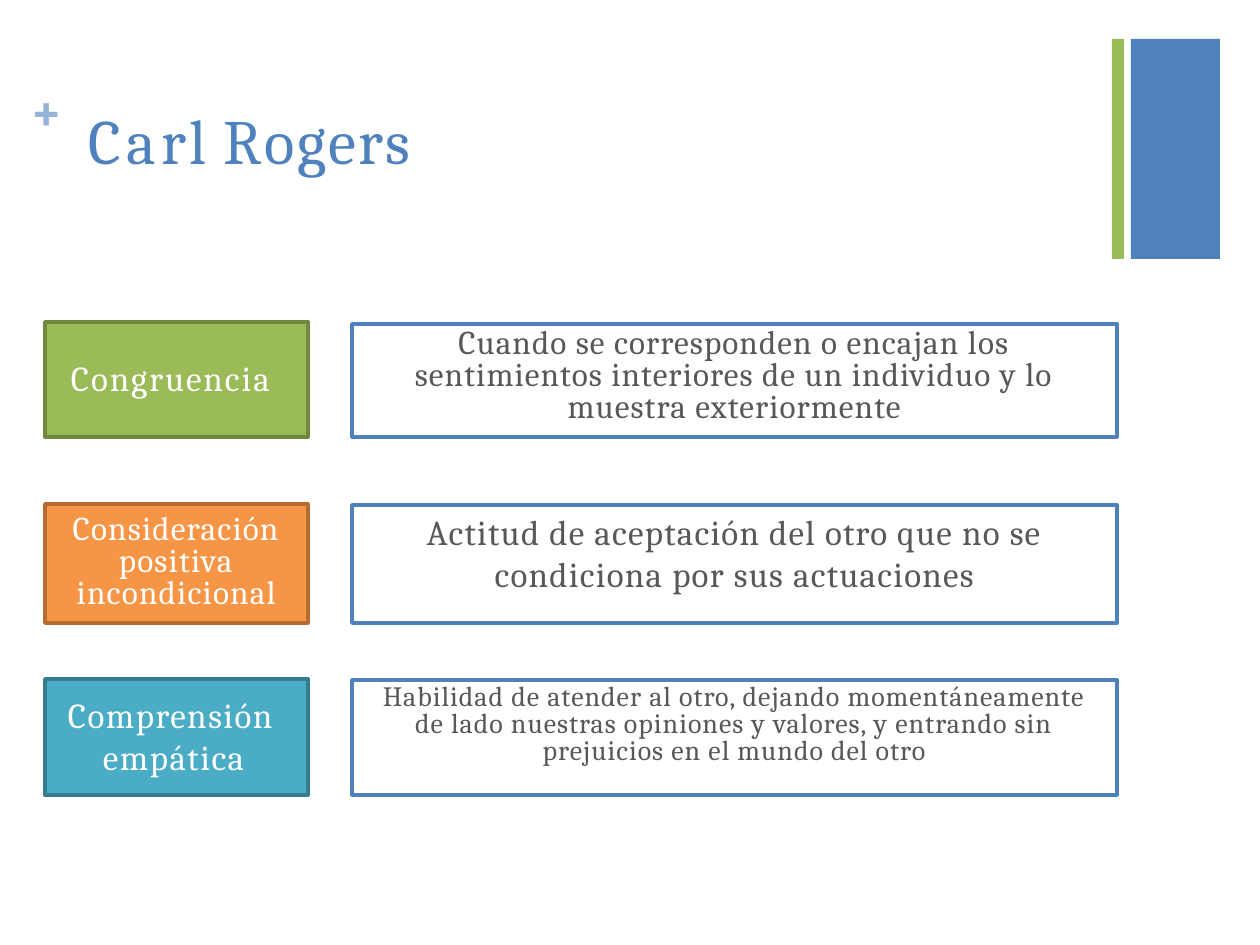
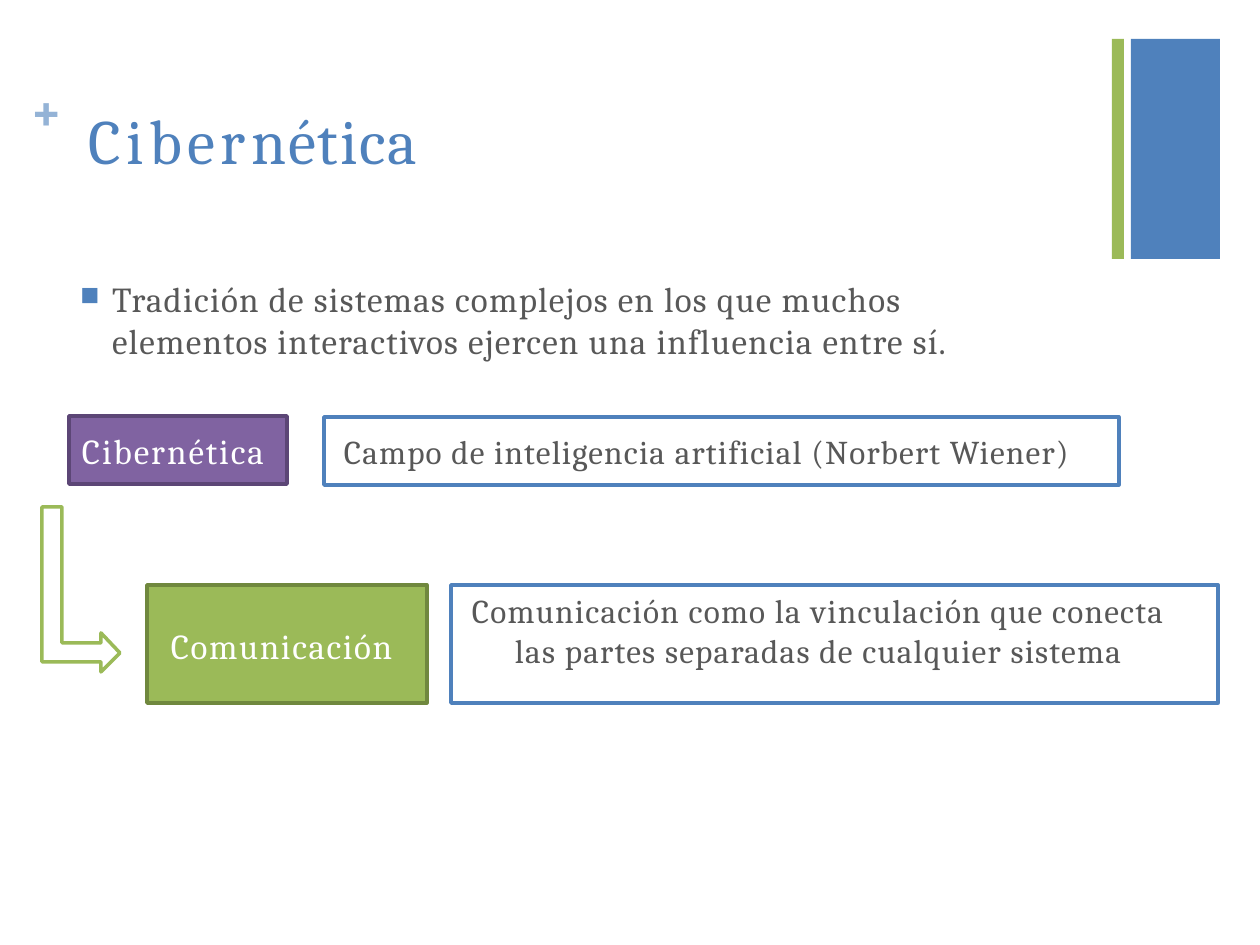
from dataclasses import dataclass
from typing import Optional

from lxml.etree import SubElement
from pptx import Presentation
from pptx.dml.color import RGBColor
from pptx.enum.shapes import MSO_SHAPE
from pptx.enum.text import MSO_ANCHOR, PP_ALIGN
from pptx.oxml.ns import qn
from pptx.shapes.base import BaseShape
from pptx.slide import Slide
from pptx.text.text import TextFrame
from pptx.util import Emu, Pt

PIXEL = 914400 / 126
FONT = "Cambria"
COLORS = {
    "blue": "4F81BC",
    "light_blue": "94B3D6",
    "green": "9BBA58",
    "dark_green": "70883E",
    "orange": "F79546",
    "dark_orange": "B66C30",
    "teal": "4AACC5",
    "dark_teal": "357C91",
    "purple": "8063A1",
    "dark_purple": "5C4676",
    "text": "585858",
    "white": "FFFFFF",
}


@dataclass(frozen=True)
class Area:
    left: int
    top: int
    width: int
    height: int

    def emu(self) -> tuple[Emu, ...]:
        return tuple(px(n) for n in (self.left, self.top, self.width, self.height))


@dataclass(frozen=True)
class Span:
    """A stretch of text with its letter spacing in points."""

    text: str
    spacing: float
    size: float = 20
    color: str = "text"
    bold: bool = False
    raised: int = 0


@dataclass(frozen=True)
class Layout:
    """Insets and indents in pixels, and how lines are set."""

    top: int = 0
    left: int = 0
    right: int = 0
    indent: int = 0
    hanging: int = 0
    centered: bool = False
    line_spacing: Optional[float] = None
    bullet: Optional[str] = None


@dataclass(frozen=True)
class Box:
    area: Area
    span: Span
    layout: Layout
    line: str = "blue"
    fill: Optional[str] = None


def px(length: float) -> Emu:
    return Emu(round(length * PIXEL))


def rgb(name: str) -> RGBColor:
    return RGBColor.from_string(COLORS[name])


def write(frame: TextFrame, *spans: Span, layout: Layout = Layout()) -> None:
    frame.word_wrap = True
    frame.vertical_anchor = MSO_ANCHOR.TOP
    frame.margin_left, frame.margin_right = px(layout.left), px(layout.right)
    frame.margin_top, frame.margin_bottom = px(layout.top), 0
    paragraph = frame.paragraphs[0]
    paragraph.alignment = PP_ALIGN.CENTER if layout.centered else PP_ALIGN.LEFT
    if layout.line_spacing:
        paragraph.line_spacing = layout.line_spacing
    properties = paragraph._p.get_or_add_pPr()
    properties.set("marL", str(px(layout.indent)))
    properties.set("indent", str(-px(layout.hanging)))
    if layout.bullet:
        color = SubElement(properties, qn("a:buClr"))
        SubElement(color, qn("a:srgbClr"), val=COLORS["blue"])
        SubElement(properties, qn("a:buSzPct"), val="75000")
        SubElement(properties, qn("a:buChar"), char=layout.bullet)
    for span in spans:
        run = paragraph.add_run()
        run.text = span.text
        run.font.name = FONT
        run.font.size = Pt(span.size)
        run.font.bold = span.bold
        run.font.color.rgb = rgb(span.color)
        run_properties = run._r.get_or_add_rPr()
        run_properties.set("spc", str(round(span.spacing * 100)))
        if span.raised:
            run_properties.set("baseline", str(span.raised * 1000))


def paint(shape: BaseShape, fill: Optional[str] = None, line: Optional[str] = None) -> None:
    shape.shadow.inherit = False
    if fill:
        shape.fill.solid()
        shape.fill.fore_color.rgb = rgb(fill)
    else:
        shape.fill.background()
    if line:
        shape.line.color.rgb = rgb(line)
        shape.line.width = Pt(2)
    else:
        shape.line.fill.background()


def add_rectangle(slide: Slide, area: Area, fill: Optional[str] = None,
                  line: Optional[str] = None) -> BaseShape:
    shape = slide.shapes.add_shape(MSO_SHAPE.RECTANGLE, *area.emu())
    paint(shape, fill, line)
    return shape


def add_text(slide: Slide, area: Area, *spans: Span, layout: Layout) -> None:
    write(slide.shapes.add_textbox(*area.emu()).text_frame, *spans, layout=layout)


def add_box(slide: Slide, box: Box) -> None:
    shape = add_rectangle(slide, box.area, box.fill, box.line)
    write(shape.text_frame, box.span, layout=box.layout)


def add_bent_arrow(slide: Slide) -> None:
    start, *corners = [(62, 507), (62, 643), (101, 643), (101, 633), (120, 653),
                       (101, 672), (101, 662), (42, 662), (42, 507)]
    builder = slide.shapes.build_freeform(*start, scale=PIXEL)
    builder.add_line_segments(corners, close=True)
    paint(builder.convert_to_shape(), line="green")


def add_titled_slide(presentation, title: list[tuple[str, float]]) -> Slide:
    """Add a blank slide with the corner bands and a title of (text, spacing) pieces."""
    slide = presentation.slides.add_slide(presentation.slide_layouts[6])
    add_rectangle(slide, Area(1131, 39, 89, 220), fill="blue")
    add_rectangle(slide, Area(1112, 39, 12, 220), fill="green")
    plus = Span("+ ", 4, size=54, color="light_blue", bold=True, raised=36)
    pieces = [Span(text, spacing, size=36, color="blue") for text, spacing in title]
    add_text(slide, Area(25, 69, 800, 79), plus, *pieces, layout=Layout(top=1, left=5))
    return slide


def label(area: Area, text: str, color: str, layout: Layout,
          spacing: float = 1.1, size: float = 20) -> Box:
    return Box(area, Span(text, spacing, size, "white"), layout, f"dark_{color}", color)


ROGERS_BOXES = [
    label(Area(45, 322, 263, 115), "Congruencia", "green", Layout(top=35, left=26)),
    Box(Area(352, 324, 765, 113),
        Span("Cuando se corresponden o encajan los sentimientos interiores de un "
             "individuo y lo muestra exteriormente", 0.65, size=19),
        Layout(top=5, left=52, right=52, centered=True, line_spacing=0.8)),
    label(Area(45, 504, 263, 119), "Consideración positiva incondicional", "orange",
          Layout(top=11, left=20, right=20, centered=True, line_spacing=0.8),
          spacing=0.7, size=19),
    Box(Area(352, 505, 765, 118),
        Span("Actitud de aceptación del otro que no se condiciona por sus actuaciones", 0.7),
        Layout(top=5, centered=True)),
    label(Area(45, 679, 263, 116), "Comprensión empática", "teal",
          Layout(top=15, indent=58, hanging=35), spacing=0.85),
    Box(Area(352, 680, 765, 115),
        Span("Habilidad de atender al otro, dejando momentáneamente de lado nuestras "
             "opiniones y valores, y entrando sin prejuicios en el mundo del otro",
             0.6, size=16),
        Layout(top=5, left=25, right=25, centered=True, line_spacing=0.8)),
]

CYBERNETICS_BOXES = [
    label(Area(69, 416, 218, 68), "Cibernética", "purple", Layout(top=13, left=13)),
    Box(Area(324, 417, 795, 68),
        Span("Campo de inteligencia artificial (Norbert Wiener)", 0.7, size=19),
        Layout(top=14, left=20)),
    label(Area(147, 585, 280, 118), "Comunicación", "green",
          Layout(top=39, left=24), spacing=0.9),
    Box(Area(451, 585, 767, 118),
        Span("Comunicación como la vinculación que conecta las partes separadas de "
             "cualquier sistema", 0.75, size=19),
        Layout(top=5, right=40, indent=64, hanging=43)),
]


def main() -> None:
    presentation = Presentation()
    presentation.slide_width, presentation.slide_height = px(1260), px(945)

    rogers = add_titled_slide(
        presentation, [("Ca", 3.1), ("r", 1.9), ("l ", 0.7), ("Ro", 1.9), ("gers", 1.3)])
    for box in ROGERS_BOXES:
        add_box(rogers, box)

    cybernetics = add_titled_slide(presentation, [("Ciber", 3.1), ("nética", 1.1)])
    add_text(cybernetics, Area(79, 277, 898, 87),
             Span("Tradición de sistemas complejos en los que muchos elementos "
                  "interactivos ejercen una influencia entre sí.", 0.7),
             layout=Layout(top=1, indent=33, hanging=32, bullet="■"))
    for box in CYBERNETICS_BOXES:
        add_box(cybernetics, box)
    add_bent_arrow(cybernetics)

    presentation.save("out.pptx")


if __name__ == "__main__":
    main()
